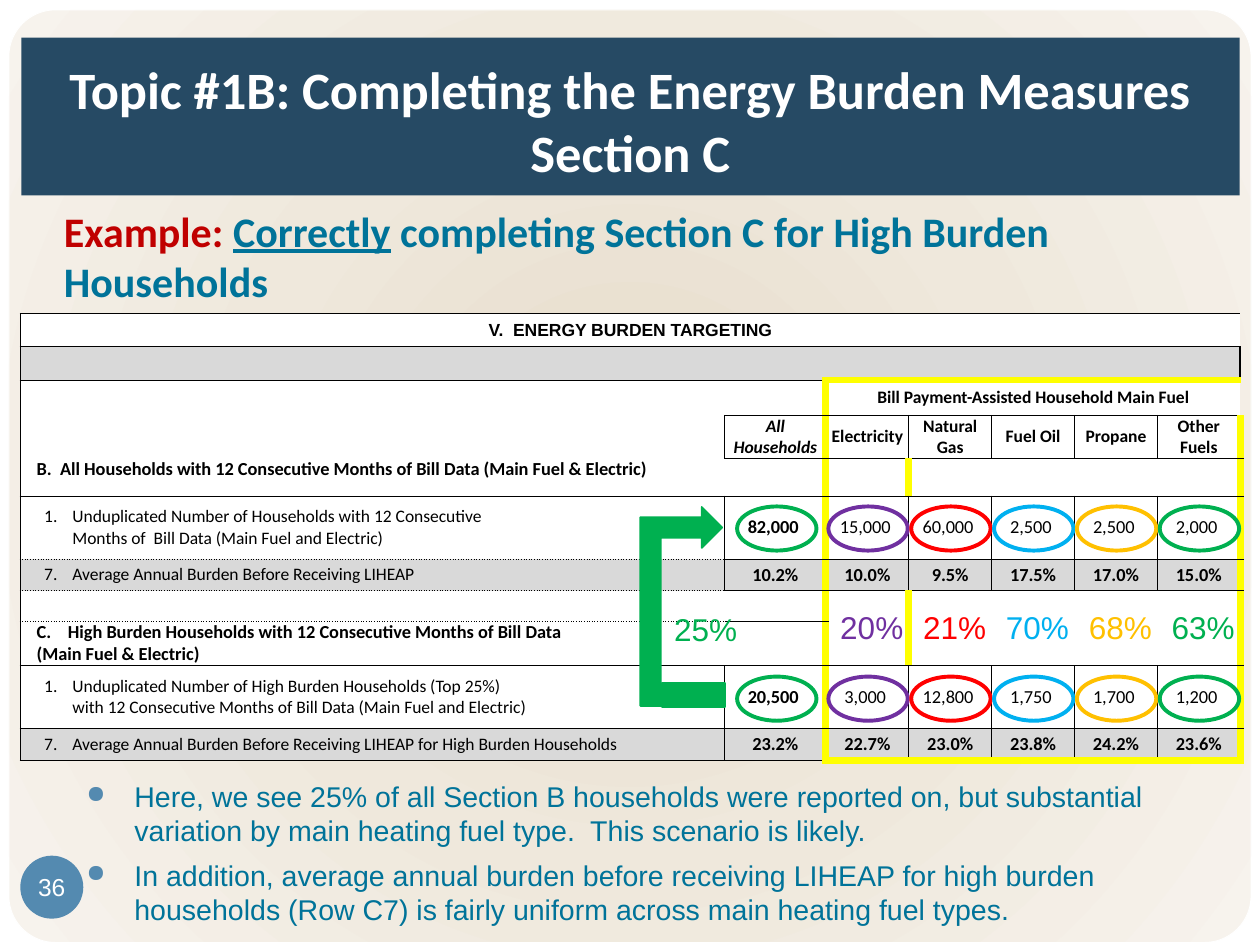
import pptx
import pptx.dml.color
import pptx.enum.shapes
import pptx.enum.text
import pptx.oxml
import pptx.oxml.ns
import pptx.util

Cm = pptx.util.Cm
Pt = pptx.util.Pt
Shape = pptx.enum.shapes.MSO_SHAPE
Align = pptx.enum.text.PP_ALIGN
Anchor = pptx.enum.text.MSO_ANCHOR

COLORS = {
    "white": "FFFFFF", "black": "000000", "gray": "D9D9D9", "navy": "264A64",
    "teal": "007399", "steel": "548AB0", "dark red": "C00000", "yellow": "FFFF00",
    "green": "00B050", "purple": "7030A0", "red": "FF0000", "sky": "00B0F0",
    "amber": "FFC000",
}
FUEL_COLORS = ["purple", "red", "sky", "amber", "green"]
PLAIN_STYLE = "{2D5ABB26-0587-4C30-8999-92F81FD0307C}"
COLUMN_WIDTHS = [14.2, 2.04] + [1.67] * 5
ROW_HEIGHTS = [0.67, 0.67, 0.71, 0.87, 0.76, 1.27, 0.64, 0.61, 0.9, 1.27, 0.64]
GRAY_ROWS = (1, 6, 10)
GRID_ROWS = (3, 5, 6, 9, 10)

FUELS = ["All Households", "Electricity", "Natural Gas", "Fuel Oil", "Propane", "Other Fuels"]
MEASURES = {
    5: ["82,000 ", "15,000 ", "60,000 ", "2,500 ", "2,500 ", "2,000 "],
    6: ["10.2%", "10.0%", "9.5%", "17.5%", "17.0%", "15.0%"],
    9: ["20,500 ", "3,000 ", "12,800 ", "1,750 ", "1,700 ", "1,200 "],
    10: ["23.2%", "22.7%", "23.0%", "23.8%", "24.2%", "23.6%"],
}
MEASURE_LABELS = {
    5: (1, "Unduplicated Number of Households with 12 Consecutive\n"
           "Months of  Bill Data (Main Fuel and Electric)"),
    6: (7, "Average Annual Burden Before Receiving LIHEAP"),
    9: (1, "Unduplicated Number of High Burden Households (Top 25%)\n"
           "with 12 Consecutive Months of Bill Data (Main Fuel and Electric)"),
    10: (7, "Average Annual Burden Before Receiving LIHEAP for High Burden Households"),
}
HIGH_BURDEN_SHARES = ["20%", "21%", "70%", "68%", "63%"]
FINDINGS = [
    "Here, we see 25% of all Section B households were reported on, but substantial "
    "variation by main heating fuel type.  This scenario is likely.",
    "In addition, average annual burden before receiving LIHEAP for high burden "
    "households (Row C7) is fairly uniform across main heating fuel types.",
]


def rgb(name):
    """Return the named colour."""
    return pptx.dml.color.RGBColor.from_string(COLORS[name])


def xml(tag, body="", **attributes):
    """Return a DrawingML element."""
    listed = "".join(f' {key}="{value}"' for key, value in attributes.items())
    return pptx.oxml.parse_xml(f"<a:{tag} {pptx.oxml.ns.nsdecls('a')}{listed}>{body}</a:{tag}>")


def solid(name):
    """Return the markup of a solid fill."""
    return f'<a:solidFill><a:srgbClr val="{COLORS[name]}"/></a:solidFill>'


def write(paragraph, text, size=10, font="Calibri", color="black", bold=False,
          italic=False, underline=False, align=Align.LEFT):
    """Add formatted text to a paragraph."""
    paragraph.alignment = align
    for number, line in enumerate(text.split("\n")):
        if number:
            paragraph.add_line_break()
        run = paragraph.add_run()
        run.text = line
        run.font.size, run.font.name = Pt(size), font
        run.font.bold, run.font.italic, run.font.underline = bold, italic, underline
        run.font.color.rgb = rgb(color)


def indent(paragraph, left, hanging=0, marks=()):
    """Set the indent of a paragraph and its bullet or number."""
    properties = paragraph._p.get_or_add_pPr()
    properties.set("marL", str(Cm(left)))
    properties.set("indent", str(-Cm(hanging)))
    for mark in marks:
        properties.append(mark)


class SlideBuilder:
    """Holds the current slide and its style."""

    def __init__(self, slide, font="Arial"):
        self.slide = slide
        self.font = font

    def shape(self, kind, left, top, width, height, fill=None, line=None, weight=1):
        """Add a preset shape."""
        shape = self.slide.shapes.add_shape(kind, Cm(left), Cm(top), Cm(width), Cm(height))
        shape.shadow.inherit = False
        if fill:
            shape.fill.solid()
            shape.fill.fore_color.rgb = rgb(fill)
        else:
            shape.fill.background()
        if line:
            shape.line.color.rgb = rgb(line)
            shape.line.width = Pt(weight)
        else:
            shape.line.fill.background()
        return shape

    def panel(self, left, top, width, height, stops):
        """Add a rounded panel with a radial gradient."""
        panel = self.shape(Shape.ROUNDED_RECTANGLE, left, top, width, height, "white", "white", 0.5)
        panel.adjustments[0] = 0.05
        marks = "".join(f'<a:gs pos="{place}000"><a:srgbClr val="{color}"/></a:gs>'
                        for place, color in stops.items())
        center = '<a:fillToRect l="50000" t="50000" r="50000" b="50000"/>'
        gradient = xml("gradFill", f'<a:gsLst>{marks}</a:gsLst><a:path path="circle">{center}</a:path>')
        properties = panel._element.spPr
        properties.replace(properties.find(pptx.oxml.ns.qn("a:solidFill")), gradient)

    def text_box(self, left, top, width, height, wrap=True):
        """Add a text box and return its frame."""
        frame = self.slide.shapes.add_textbox(Cm(left), Cm(top), Cm(width), Cm(height)).text_frame
        frame.word_wrap = wrap
        return frame

    def table(self, left, top, widths, heights):
        """Add an unstyled table with white and gray rows."""
        table = self.slide.shapes.add_table(len(heights), len(widths), Cm(left), Cm(top),
                                            Cm(sum(widths)), Cm(sum(heights))).table
        table._tbl.tblPr.find(pptx.oxml.ns.qn("a:tableStyleId")).text = PLAIN_STYLE
        table.first_row = table.horz_banding = False
        for column, width in zip(table.columns, widths):
            column.width = Cm(width)
        for number, (row, height) in enumerate(zip(table.rows, heights)):
            row.height = Cm(height)
            for cell in row.cells:
                cell.margin_left = cell.margin_right = cell.margin_top = cell.margin_bottom = 0
                cell.vertical_anchor = Anchor.MIDDLE
                cell.fill.solid()
                cell.fill.fore_color.rgb = rgb("gray" if number in GRAY_ROWS else "white")
                cell.text_frame.paragraphs[0]._p.append(xml("endParaRPr", sz=800))
        return table

    def borders(self, table):
        """Draw the black rules and the yellow frame of the fuel columns."""
        edges = {}
        last_row, last_column = len(table.rows) - 1, len(table.columns) - 1

        def below(row, columns, color="black", weight=0.5, dash="solid"):
            for column in columns:
                edges[row, column, "B"] = edges[row + 1, column, "T"] = (color, weight, dash)

        def beside(column, rows, color="black", weight=0.5):
            for row in rows:
                edges[row, column, "R"] = edges[row, column + 1, "L"] = (color, weight, "solid")

        every, fuels, amounts = range(7), range(2, 7), range(1, 7)
        below(-1, every, weight=1)
        for row in (0, 4, 8):
            below(row, every)
        for row in (2, 3, 5, 6, 9):
            below(row, amounts)
        for row in (5, 6):
            below(row, [0], dash="sysDot")
        below(last_row, [0, 1], weight=1)
        for column in range(last_column):
            beside(column, GRID_ROWS)
        beside(-1, range(last_row + 1), weight=1)
        beside(last_column, (0, 1), weight=1)
        for row in (1, last_row):
            below(row, fuels, "yellow", 4.5)
        for column in (1, last_column):
            beside(column, range(2, last_row + 1), "yellow", 4.5)
        for row in range(last_row + 1):
            for column in every:
                properties = table.cell(row, column)._tc.get_or_add_tcPr()
                sides = [side for side in "LRTB" if (row, column, side) in edges]
                for place, side in enumerate(sides):
                    color, weight, dash = edges[row, column, side]
                    rule = xml(f"ln{side}", f'{solid(color)}<a:prstDash val="{dash}"/>', w=Pt(weight))
                    properties.insert(place, rule)

    def burden_table(self):
        """Add the energy burden table."""
        table = self.table(0.41, 6.32, COLUMN_WIDTHS, ROW_HEIGHTS)

        def fill_in(row, column, text, align=Align.CENTER, **style):
            paragraph = table.cell(row, column).text_frame.paragraphs[0]
            write(paragraph, text, align=align, **style)
            return paragraph

        table.cell(0, 0).merge(table.cell(0, 6))
        table.cell(2, 2).merge(table.cell(2, 6))
        fill_in(0, 0, "V.  ENERGY BURDEN TARGETING", font=self.font, bold=True)
        fill_in(2, 2, "Bill Payment-Assisted Household Main Fuel", bold=True)
        for column, fuel in enumerate(FUELS, 1):
            fill_in(3, column, fuel, bold=True, italic=column == 1)
        for row, amounts in MEASURES.items():
            start, label = MEASURE_LABELS[row]
            number = xml("buAutoNum", type="arabicPeriod", startAt=start)
            indent(fill_in(row, 0, label, Align.LEFT), 1.05, 0.57, [number])
            for column, amount in enumerate(amounts, 1):
                fill_in(row, column, amount, size=10.5, bold=column == 1 or row in GRAY_ROWS)
        for column, (share, color) in enumerate(zip(HIGH_BURDEN_SHARES, FUEL_COLORS), 2):
            table.cell(7, column).merge(table.cell(8, column))
            fill_in(7, column, " " + share, size=18, font=self.font, color=color)
        heading = {"align": Align.LEFT, "size": 10.5, "bold": True}
        indent(fill_in(4, 0, "B.  All Households with 12 Consecutive Months of Bill Data "
                             "(Main Fuel & Electric)", **heading), 0.33)
        letter = xml("buAutoNum", type="alphaUcPeriod", startAt=3)
        indent(fill_in(8, 0, "High Burden Households with 12 Consecutive Months of Bill Data",
                       **heading), 0.96, 0.63, [letter])
        scope = table.cell(8, 0).text_frame.add_paragraph()
        write(scope, "(Main Fuel & Electric)", **heading)
        indent(scope, 0.33)
        for row in (4, 8):
            table.cell(row, 0).vertical_anchor = Anchor.TOP
        self.borders(table)

    def comparison_marks(self):
        """Circle the counts and link the two totals."""
        arrow = self.shape(Shape.BENT_UP_ARROW, 11.73, 11.4, 4.01, 1.65, "green", "green")
        arrow.rotation = 90
        arrow._element.spPr.xfrm.set("flipH", "1")
        self.shape(Shape.RECTANGLE, 13.34, 13.77, 1.27, 0.48, "green", "green")
        lefts = [14.86] + [16.7 + 1.67 * step for step in range(5)]
        for top in (10.21, 13.64):
            for left, color in zip(lefts, ["green"] + FUEL_COLORS):
                self.shape(Shape.OVAL, left, top, 1.6, 0.89, line=color, weight=2.25)
        share = self.text_box(13.34, 12.17, 1.8, 1.02, wrap=False)
        write(share.paragraphs[0], "25%", size=18, font=self.font, color="green")

    def headings(self):
        """Add the title band, the example line and the page number."""
        title = self.shape(Shape.RECTANGLE, 0.43, 0.76, 24.56, 3.18, "navy").text_frame
        title.word_wrap = True
        title.vertical_anchor = Anchor.BOTTOM
        title.margin_bottom = Cm(0.25)
        write(title.paragraphs[0], "Topic #1B: Completing the Energy Burden Measures Section C",
              size=30, color="white", bold=True, align=Align.CENTER)
        example = self.text_box(1.04, 4.01, 23.29, 2.67).paragraphs[0]
        for text, color in (("Example: ", "dark red"), ("Correctly", "teal"),
                            (" completing Section C for High Burden Households", "teal")):
            write(example, text, size=24, color=color, bold=True, underline=text == "Correctly")
        page = self.shape(Shape.OVAL, 0.41, 17.25, 1.27, 1.27, "steel").text_frame
        page.margin_left = page.margin_right = page.margin_top = page.margin_bottom = 0
        page.word_wrap = False
        page.vertical_anchor = Anchor.MIDDLE
        write(page.paragraphs[0], "36", size=14, font=self.font, color="white", align=Align.CENTER)

    def findings(self):
        """Add the bulleted findings."""
        frame = self.text_box(1.04, 15.57, 23.29, 3.45)
        for number, finding in enumerate(FINDINGS):
            paragraph = frame.add_paragraph() if number else frame.paragraphs[0]
            write(paragraph, finding, size=16.3, font=self.font, color="teal")
            paragraph.space_after = Pt(6)
            bullet = [xml("buClr", f'<a:srgbClr val="{COLORS["steel"]}"/>'),
                      xml("buSzPct", val=85000), xml("buChar", char="●")]
            indent(paragraph, 1.42, 0.97, bullet)


def main():
    """Build and save the slide."""
    deck = pptx.Presentation()
    deck.slide_width, deck.slide_height = Cm(25.4), Cm(19.05)
    builder = SlideBuilder(deck.slides.add_slide(deck.slide_layouts[6]))
    builder.panel(0.18, 0.2, 25.04, 18.8, {0: "E6DBC9", 50: "EFE8DC", 100: "F7F3ED"})
    builder.headings()
    builder.burden_table()
    builder.comparison_marks()
    builder.findings()
    deck.save("out.pptx")


if __name__ == "__main__":
    main()
